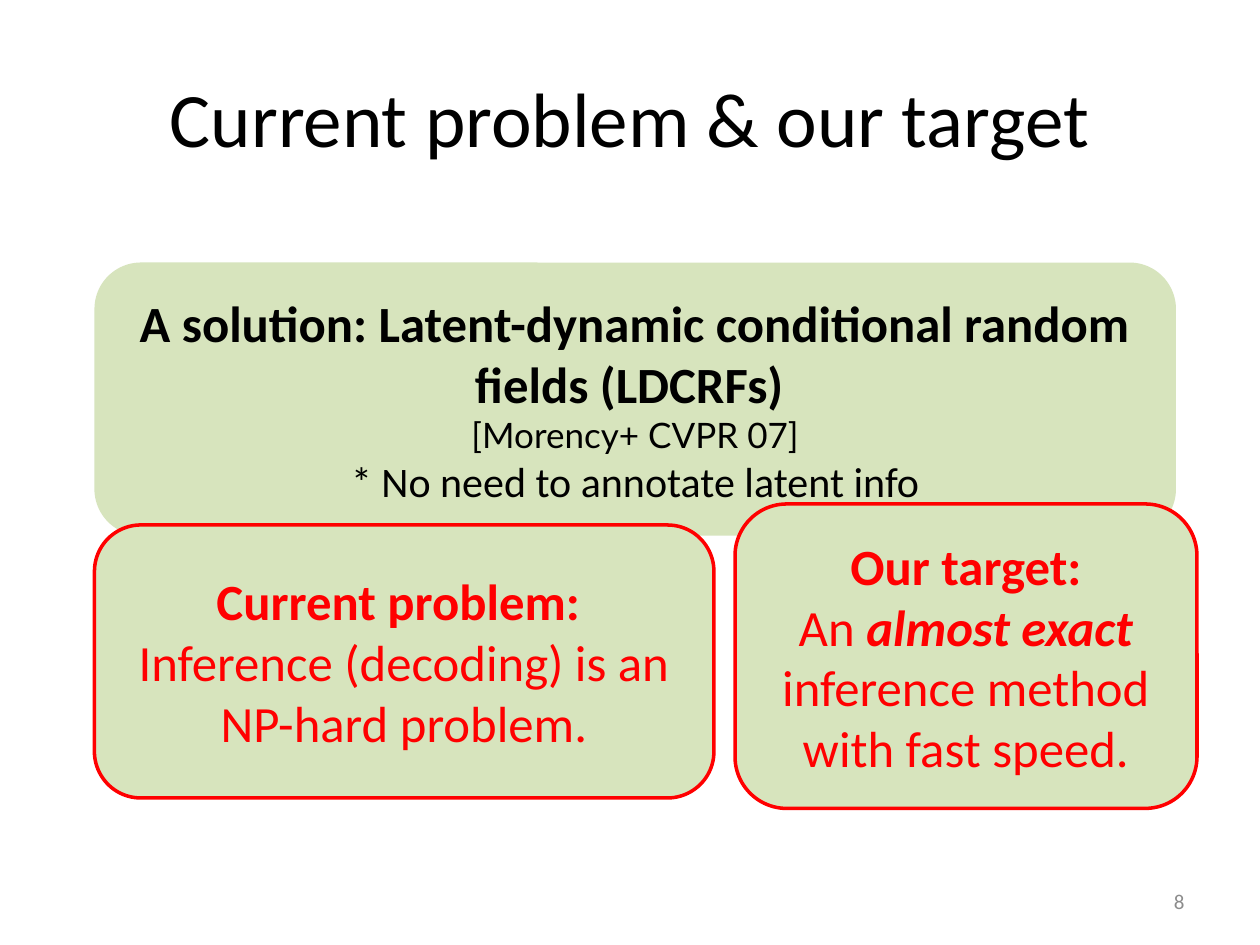
from pptx import Presentation
from pptx import util as u
from pptx.dml.color import RGBColor
from pptx.enum import shapes, text

COLORS = {"panel": "D7E4BD", "accent": "FF0000", "ink": "000000", "number": "8C8C8C"}
CELL = u.Inches(10) // 120
HEADING = {"size": 29, "bold": True}
STATEMENT = {"size": 29, "bold": False}
EMPHASIS = {"size": 29, "bold": True, "italic": True}


def cells(*counts):
    return [round(count * CELL) for count in counts]


def color(name):
    return RGBColor.from_string(COLORS[name])


def write(frame, paragraphs, ink, align=text.PP_ALIGN.CENTER):
    frame.word_wrap = True
    frame.vertical_anchor = text.MSO_ANCHOR.MIDDLE
    for index, phrases in enumerate(paragraphs):
        line = frame.paragraphs[0] if index == 0 else frame.add_paragraph()
        line.alignment = align
        for position, (words, look) in enumerate(phrases):
            if look.get("new_line") and position:
                line.add_line_break()
            phrase = line.add_run()
            phrase.text = words
            phrase.font.color.rgb = color(ink)
            formats = {"name": "Calibri", **look, "size": u.Pt(look["size"])}
            formats.pop("new_line", None)
            for key, value in formats.items():
                setattr(phrase.font, key, value)


def add_title(slide, words):
    title = slide.shapes.title
    title.left, title.top, title.width, title.height = cells(6, 3.6, 108, 15)
    write(title.text_frame, [[(words, {"size": 44})]], "ink")


def add_callout(slide, area, paragraphs, ink, outline=None):
    callout = slide.shapes.add_shape(
        shapes.MSO_SHAPE.ROUNDED_RECTANGULAR_CALLOUT, *cells(*area))
    for index, share in enumerate((0.15, 0.5, 0.17)):
        callout.adjustments[index] = share
    callout.shadow.inherit = False
    callout.fill.solid()
    callout.fill.fore_color.rgb = color("panel")
    if outline:
        callout.line.color.rgb = color(outline)
        callout.line.width = u.Pt(2)
    else:
        callout.line.fill.background()
    write(callout.text_frame, paragraphs, ink)


def add_page_number(slide, number):
    page = slide.shapes.add_textbox(*cells(86, 83.4, 28, 4.8))
    write(page.text_frame, [[(number, {"size": 12})]], "number", text.PP_ALIGN.RIGHT)


def main():
    deck = Presentation()
    deck.slide_width, deck.slide_height = cells(120, 90)
    slide = deck.slides.add_slide(deck.slide_layouts[5])
    add_title(slide, "Current problem & our target")
    add_callout(slide, (9, 25, 103, 26), [
        [("A solution: Latent-dynamic conditional random fields (LDCRFs) ", HEADING)],
        [("[Morency+ CVPR 07]", {"size": 20, "name": "Lato"})],
        [("* No need to annotate latent info", {"size": 24})],
    ], "ink")
    add_callout(slide, (9, 50, 59, 26), [
        [("Current problem: ", HEADING),
         ("Inference (decoding) is an NP-hard problem.", {**STATEMENT, "new_line": True})],
    ], "accent", "accent")
    add_callout(slide, (70, 48, 44, 29), [
        [("Our target:", HEADING)],
        [("An ", STATEMENT), ("almost exact ", EMPHASIS),
         ("inference method with fast speed.", STATEMENT)],
    ], "accent", "accent")
    add_page_number(slide, "8")
    deck.save("out.pptx")


if __name__ == "__main__":
    main()
